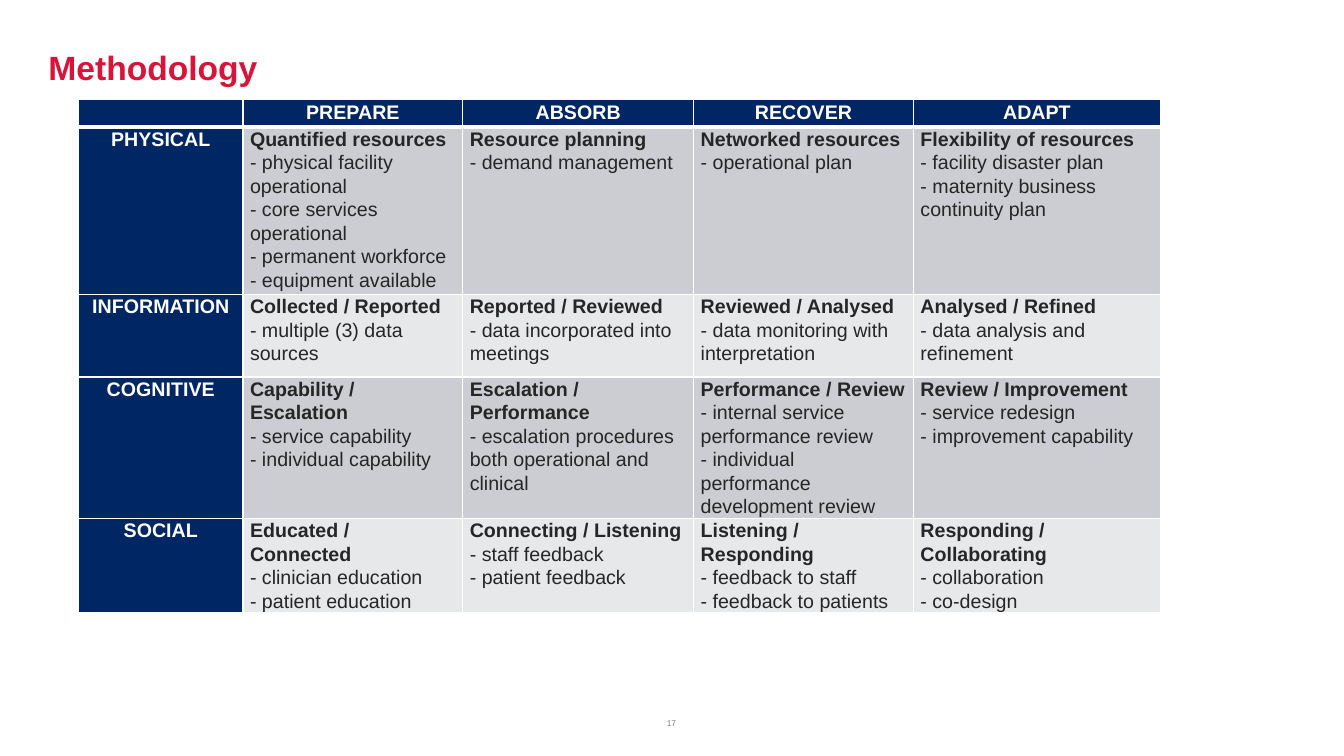
from lxml import etree
from pptx import Presentation
from pptx import util as u
from pptx.dml import color
from pptx.enum import text
from pptx.oxml import ns

NAVY, WHITE, INK = "002664", "FFFFFF", "262626"
BANDS = ["CCCDD3", "E7E8EA"]

STAGES = ["", "PREPARE", "ABSORB", "RECOVER", "ADAPT"]
DOMAINS = {
    "PHYSICAL": [
        ["Quantified resources", "- physical facility operational", "- core services operational",
         "- permanent workforce", "- equipment available"],
        ["Resource planning", "- demand management"],
        ["Networked resources", "- operational plan"],
        ["Flexibility of resources", "- facility disaster plan",
         "- maternity business continuity plan"],
    ],
    "INFORMATION": [
        ["Collected / Reported", "- multiple (3) data sources"],
        ["Reported / Reviewed", "- data incorporated into meetings"],
        ["Reviewed / Analysed", "- data monitoring with interpretation"],
        ["Analysed / Refined", "- data analysis and refinement"],
    ],
    "COGNITIVE": [
        ["Capability / Escalation", "- service capability", "- individual capability"],
        ["Escalation / Performance", "- escalation procedures both operational and clinical"],
        ["Performance / Review", "- internal service performance review",
         "- individual performance development review"],
        ["Review / Improvement", "- service redesign", "- improvement capability"],
    ],
    "SOCIAL": [
        ["Educated / Connected", "- clinician education", "- patient education"],
        ["Connecting / Listening", "- staff feedback", "- patient feedback"],
        ["Listening / Responding", "- feedback to staff", "- feedback to patients"],
        ["Responding / Collaborating", "- collaboration", "- co-design"],
    ],
}
COLUMN_WIDTHS = [1.63, 2.18, 2.29, 2.18, 2.45]
ROW_HEIGHTS = [0.27, 1.66, 0.82, 1.38, 0.82]


def rgb(value):
    return color.RGBColor.from_string(value)


class MethodologyPage:
    font = "Arial"

    def __init__(self, deck):
        self.page = deck.slides.add_slide(deck.slide_layouts[5])

    def place(self, shape, left, top, width, height):
        shape.left, shape.top = u.Inches(left), u.Inches(top)
        shape.width, shape.height = u.Inches(width), u.Inches(height)

    def format_para(self, para, size, ink, bold=False, align=text.PP_ALIGN.LEFT, spacing=1.0):
        para.alignment = align
        para.line_spacing = spacing
        for span in para.runs:
            span.font.name = self.font
            span.font.size = u.Pt(size)
            span.font.bold = bold
            span.font.color.rgb = rgb(ink)

    def fit_frame(self, frame, anchor):
        frame.margin_left = frame.margin_right = frame.margin_top = frame.margin_bottom = 0
        frame.word_wrap = True
        frame.auto_size = text.MSO_AUTO_SIZE.NONE
        frame.vertical_anchor = anchor

    def title(self, words):
        box = self.page.shapes.title
        self.place(box, 0.48, 0.4, 12.36, 0.59)
        box.text_frame.text = words
        self.fit_frame(box.text_frame, text.MSO_ANCHOR.MIDDLE)
        self.format_para(box.text_frame.paragraphs[0], 24, "D7153A", bold=True, spacing=0.9)

    def page_number(self, number):
        box = self.page.shapes.add_textbox(
            u.Inches(5.74), u.Inches(6.92), u.Inches(1.84), u.Inches(0.3))
        box.text_frame.text = number
        self.fit_frame(box.text_frame, text.MSO_ANCHOR.BOTTOM)
        self.format_para(box.text_frame.paragraphs[0], 6, "7F7F7F", align=text.PP_ALIGN.CENTER)

    def borders(self, cell, widths):
        properties = cell._tc.get_or_add_tcPr()
        for side, width in widths.items():
            line = etree.SubElement(properties, ns.qn(f"a:ln{side}"), w=str(u.Pt(width)))
            fill = etree.SubElement(line, ns.qn("a:solidFill"))
            etree.SubElement(fill, ns.qn("a:srgbClr"), val=WHITE)

    def cell(self, cell, lines, fill, heading, top=1, bottom=1):
        cell.margin_left = cell.margin_right = u.Inches(0.07)
        cell.margin_top = cell.margin_bottom = 0
        self.borders(cell, {"L": 1, "R": 1, "T": top, "B": bottom})
        cell.fill.solid()
        cell.fill.fore_color.rgb = rgb(fill)
        cell.text_frame.text = "\n".join(lines)
        for index, para in enumerate(cell.text_frame.paragraphs):
            self.format_para(para, 14, WHITE if heading else INK, bold=index == 0,
                             align=text.PP_ALIGN.CENTER if heading else text.PP_ALIGN.LEFT,
                             spacing=1.07)
            if not para.runs:  # keeps the empty corner cell as low as its row
                etree.SubElement(para._p, ns.qn("a:endParaRPr"), sz="1400")

    def matrix(self, left, top):
        frame = self.page.shapes.add_table(
            len(ROW_HEIGHTS), len(COLUMN_WIDTHS), u.Inches(left), u.Inches(top),
            u.Inches(sum(COLUMN_WIDTHS)), u.Inches(sum(ROW_HEIGHTS)))
        table = frame.table
        table.first_row = table.horz_banding = False
        for column, width in zip(table.columns, COLUMN_WIDTHS):
            column.width = u.Inches(width)
        for row, height in zip(table.rows, ROW_HEIGHTS):
            row.height = u.Inches(height)
        # Header row
        for column, stage in enumerate(STAGES):
            self.cell(table.cell(0, column), [stage], NAVY, True, bottom=3)
        # One row per domain, its name in the first column
        for row, (domain, entries) in enumerate(DOMAINS.items(), 1):
            top_line = 3 if row == 1 else 1
            self.cell(table.cell(row, 0), [domain], NAVY, True, top=top_line)
            for column, lines in enumerate(entries, 1):
                self.cell(table.cell(row, column), lines, BANDS[(row - 1) % 2], False,
                          top=top_line)


def main():
    deck = Presentation()
    deck.slide_width, deck.slide_height = u.Inches(13.33), u.Inches(7.5)
    page = MethodologyPage(deck)
    page.title("Methodology")
    page.matrix(0.78, 0.99)
    page.page_number("17")
    deck.save("out.pptx")


if __name__ == "__main__":
    main()
